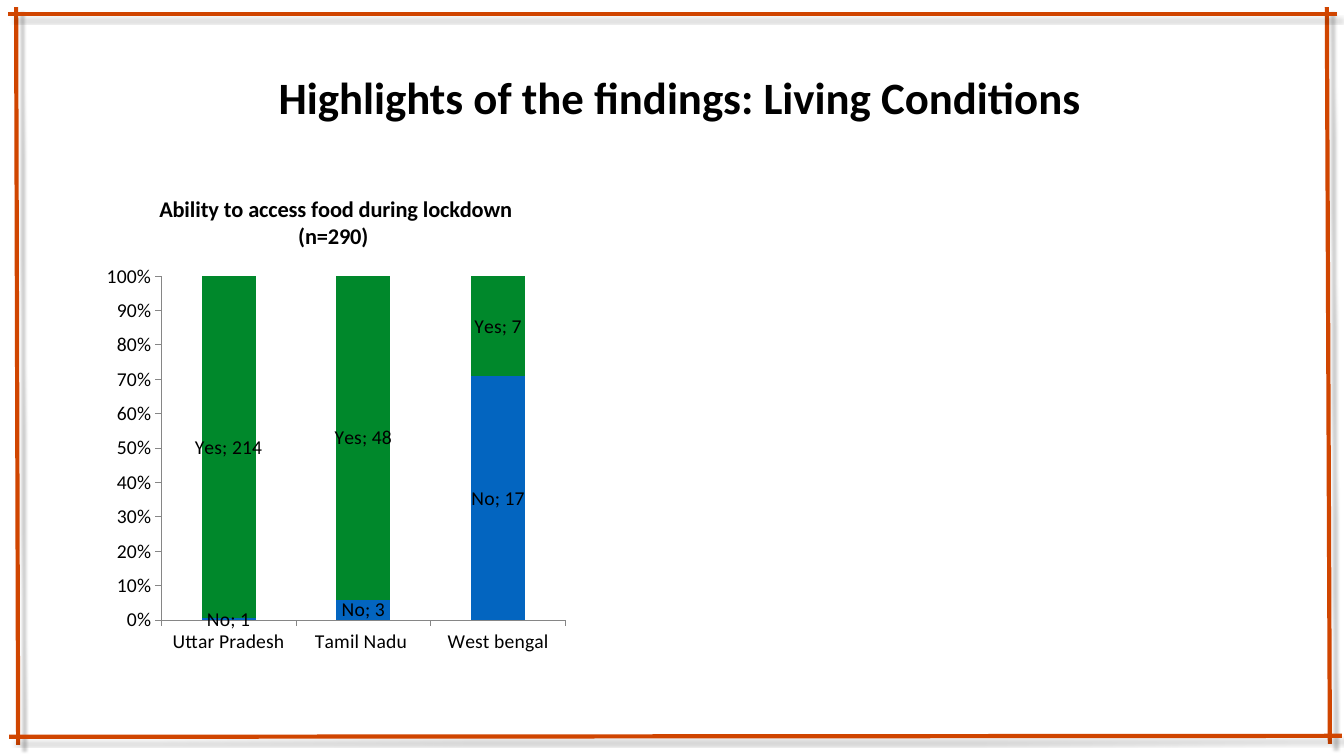
from lxml import etree
from pptx import Presentation
from pptx import util as u
from pptx.chart.data import CategoryChartData
from pptx.dml.color import RGBColor
from pptx.enum import chart as charts, shapes, text
from pptx.oxml import parse_xml
from pptx.oxml.ns import nsdecls, qn

WIDTH, HEIGHT = u.Inches(13.33), u.Inches(7.5)
FONT = "Calibri"
BLACK, ORANGE, BLUE, GREEN, GREY = "000000", "D04500", "0365C0", "00882B", "868686"
FRAME = [
    (0.16, 0.07, 0.18, 7.39),
    (13.16, 0.07, 13.19, 7.38),
    (0.09, 7.31, 13.31, 7.3),
    (0.08, 0.14, 13.26, 0.14),
]


def colour(value):
    """Turn a hex string into a colour."""
    return RGBColor.from_string(value)


def style_font(font, size, bold=False):
    """Give a font the slide's typeface and black colour."""
    font.name, font.size, font.bold = FONT, u.Pt(size), bold
    font.color.rgb = colour(BLACK)


def add_frame_line(slide, ends):
    """Draw one side of the frame with its soft shadow."""
    line = slide.shapes.add_connector(
        shapes.MSO_CONNECTOR.STRAIGHT, *(u.Inches(end) for end in ends))
    line.line.color.rgb = colour(ORANGE)
    line.line.width = u.Pt(3)
    line._element.spPr.append(parse_xml(
        f'<a:effectLst {nsdecls("a")}><a:outerShdw blurRad="{u.Pt(2)}" '
        f'dist="{u.Pt(6)}" dir="2700000" algn="tl" rotWithShape="0">'
        f'<a:srgbClr val="{BLACK}"><a:alpha val="20000"/></a:srgbClr>'
        '</a:outerShdw></a:effectLst>'))


def add_title(slide, wording):
    """Place and format the slide title."""
    title = slide.shapes.title
    title.left, title.top = u.Inches(1.38), u.Inches(0.36)
    title.width, title.height = u.Inches(10.73), u.Inches(0.87)
    frame = title.text_frame
    frame.margin_left = frame.margin_right = frame.margin_top = frame.margin_bottom = 0
    frame.vertical_anchor = text.MSO_ANCHOR.BOTTOM
    frame.text = wording
    paragraph = frame.paragraphs[0]
    paragraph.alignment = text.PP_ALIGN.CENTER
    style_font(paragraph.font, 32, True)


def set_plot_area(chart, x, y, w, h):
    """Fix the inner plot area as shares of the chart's size."""
    plot_area = chart._chartSpace.chart.plotArea
    for old in plot_area.findall(qn("c:layout")):
        plot_area.remove(old)
    layout = etree.Element(qn("c:layout"))
    manual = etree.SubElement(layout, qn("c:manualLayout"))
    settings = [("layoutTarget", "inner"), ("xMode", "edge"), ("yMode", "edge"),
                ("x", x), ("y", y), ("w", w), ("h", h)]
    for name, value in settings:
        etree.SubElement(manual, qn(f"c:{name}")).set("val", str(value))
    plot_area.insert(0, layout)


def style_axis(axis):
    """Show an axis with outer ticks and no gridlines."""
    axis.has_major_gridlines = False
    axis.major_tick_mark = charts.XL_TICK_MARK.OUTSIDE
    axis.minor_tick_mark = charts.XL_TICK_MARK.NONE
    axis.format.line.color.rgb = colour(GREY)
    style_font(axis.tick_labels.font, 14)


def style_series(series, fill):
    """Fill a series and label it with its name and values."""
    series.format.fill.solid()
    series.format.fill.fore_color.rgb = colour(fill)
    labels = series.data_labels
    labels.show_value = labels.show_series_name = True
    labels.position = charts.XL_LABEL_POSITION.CENTER
    style_font(labels.font, 14)
    separator = etree.Element(qn("c:separator"))
    separator.text = "; "
    labels._element.find(qn("c:showBubbleSize")).addnext(separator)


def add_food_chart(slide):
    """Add the stacked chart on access to food."""
    data = CategoryChartData()
    data.categories = ["Uttar Pradesh", "Tamil Nadu ", "West bengal"]
    data.add_series("No", (1, 3, 17))
    data.add_series("Yes", (214, 48, 7))
    chart = slide.shapes.add_chart(
        charts.XL_CHART_TYPE.COLUMN_STACKED_100, u.Inches(0.96), u.Inches(1.73),
        u.Inches(4.74), u.Inches(4.86), data).chart
    style_font(chart.font, 14)
    chart.has_legend = False
    chart.has_title = True
    title = chart.chart_title
    title.include_in_layout = False
    title.text_frame.text = "Ability to access food during lockdown (n=290) "
    style_font(title.text_frame.paragraphs[0].font, 16, True)
    plot = chart.plots[0]
    plot.gap_width, plot.overlap, plot.vary_by_categories = 150, 100, False
    for series, fill in zip(plot.series, (BLUE, GREEN)):
        style_series(series, fill)
    for axis in (chart.category_axis, chart.value_axis):
        style_axis(axis)
    value_axis = chart.value_axis
    value_axis.minimum_scale, value_axis.maximum_scale, value_axis.major_unit = 0, 1, 0.1
    value_axis.tick_labels.number_format = "0%"
    value_axis.tick_labels.number_format_is_linked = False
    set_plot_area(chart, 0.135, 0.208, 0.846, 0.702)


def main():
    """Build and save the slide."""
    presentation = Presentation()
    presentation.slide_width, presentation.slide_height = WIDTH, HEIGHT
    slide = presentation.slides.add_slide(presentation.slide_layouts[5])
    for ends in FRAME:
        add_frame_line(slide, ends)
    add_title(slide, "Highlights of the findings: Living Conditions")
    add_food_chart(slide)
    presentation.save("out.pptx")


if __name__ == "__main__":
    main()
